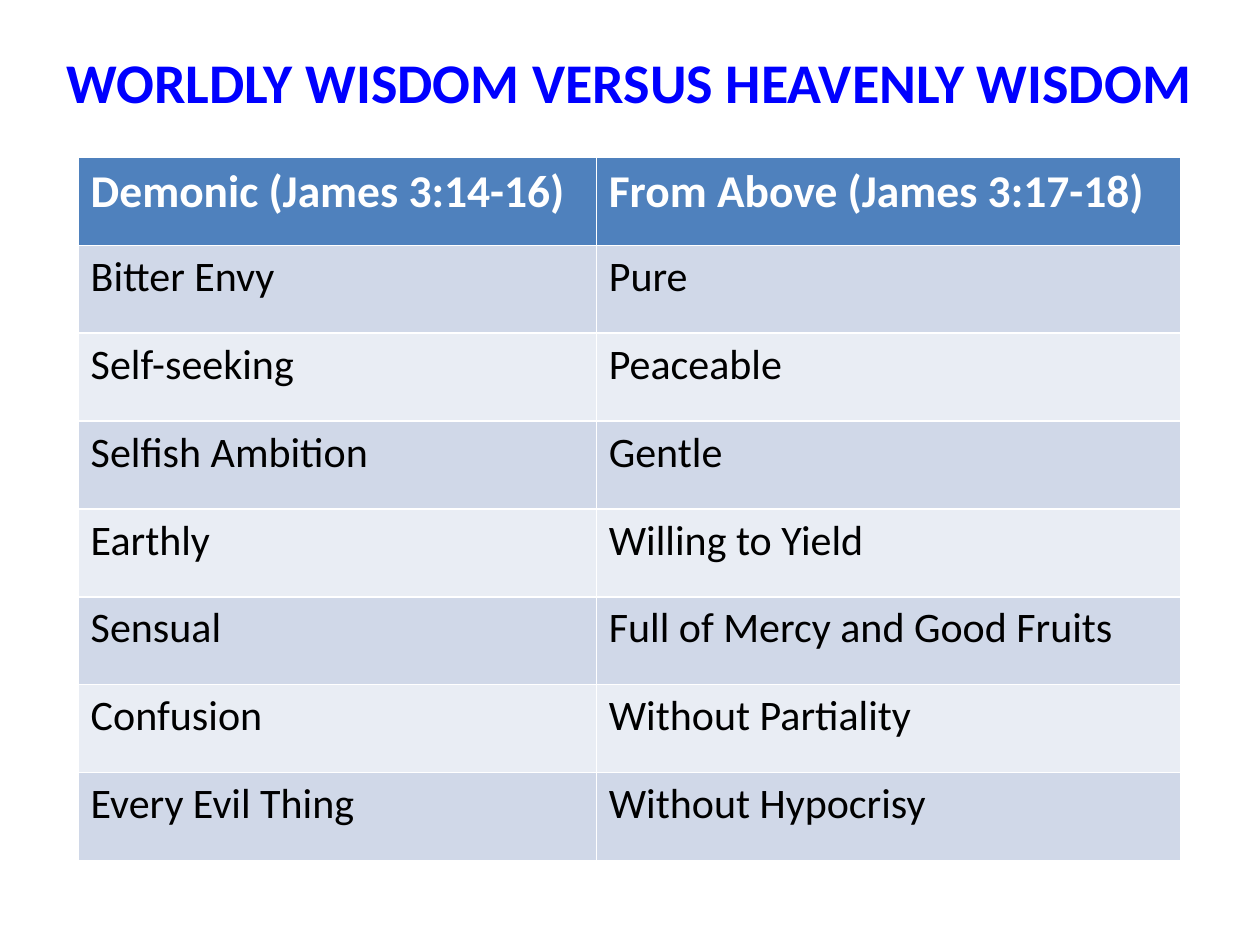
from collections import namedtuple

from pptx import Presentation, util as u
from pptx.dml.color import RGBColor
from pptx.enum import text as t

BLUE = RGBColor(0x00, 0x00, 0xFF)
WHITE = RGBColor(0xFF, 0xFF, 0xFF)
BLACK = RGBColor(0x00, 0x00, 0x00)
HEADER_FILL = RGBColor(0x4F, 0x81, 0xBD)
BAND_FILLS = (RGBColor(0xE9, 0xED, 0xF4), RGBColor(0xD0, 0xD8, 0xE8))

FONT = "Calibri"
WIDTH, HEIGHT = 10, 7.5
FIRST_COLUMN_SHARE = 0.47

Box = namedtuple("Box", "left top width height")
TITLE_BOX = Box(0.39, 0.33, 9.21, 0.64)
TABLE_BOX = Box(0.62, 1.25, 8.75, 5.58)

TITLE = "WORLDLY WISDOM VERSUS HEAVENLY WISDOM"
WISDOM_ROWS = [
    ("Demonic (James 3:14-16)", "From Above (James 3:17-18)"),
    ("Bitter Envy", "Pure"),
    ("Self-seeking", "Peaceable"),
    ("Selfish Ambition", "Gentle"),
    ("Earthly", "Willing to Yield"),
    ("Sensual", "Full of Mercy and Good Fruits"),
    ("Confusion", "Without Partiality"),
    ("Every Evil Thing", "Without Hypocrisy"),
]


def write_text(frame, words, size, color, bold=False, align=t.PP_ALIGN.LEFT):
    paragraph = frame.paragraphs[0]
    paragraph.alignment = align
    run = paragraph.add_run()
    run.text = words
    run.font.name = FONT
    run.font.size = u.Pt(size)
    run.font.bold = bold
    run.font.color.rgb = color


def add_title(slide, box):
    shape = slide.shapes.add_textbox(*map(u.Inches, box))
    shape.text_frame.word_wrap = False
    shape.text_frame.auto_size = t.MSO_AUTO_SIZE.SHAPE_TO_FIT_TEXT
    write_text(shape.text_frame, TITLE, size=32, color=BLUE, bold=True,
               align=t.PP_ALIGN.CENTER)


def add_wisdom_table(slide, box):
    shape = slide.shapes.add_table(len(WISDOM_ROWS), 2, *map(u.Inches, box))
    table = shape.table
    shares = (FIRST_COLUMN_SHARE, 1 - FIRST_COLUMN_SHARE)
    for column, share in zip(table.columns, shares):
        column.width = u.Inches(box.width * share)

    for row_index, row in enumerate(WISDOM_ROWS):
        is_header = row_index == 0
        fill = HEADER_FILL if is_header else BAND_FILLS[row_index % 2]
        for column_index, words in enumerate(row):
            cell = table.cell(row_index, column_index)
            cell.fill.solid()
            cell.fill.fore_color.rgb = fill
            write_text(cell.text_frame, words,
                       size=26 if is_header else 24,
                       color=WHITE if is_header else BLACK,
                       bold=is_header)


def main():
    presentation = Presentation()
    presentation.slide_width = u.Inches(WIDTH)
    presentation.slide_height = u.Inches(HEIGHT)
    slide = presentation.slides.add_slide(presentation.slide_layouts[6])
    add_wisdom_table(slide, TABLE_BOX)
    add_title(slide, TITLE_BOX)
    presentation.save("out.pptx")


if __name__ == "__main__":
    main()
